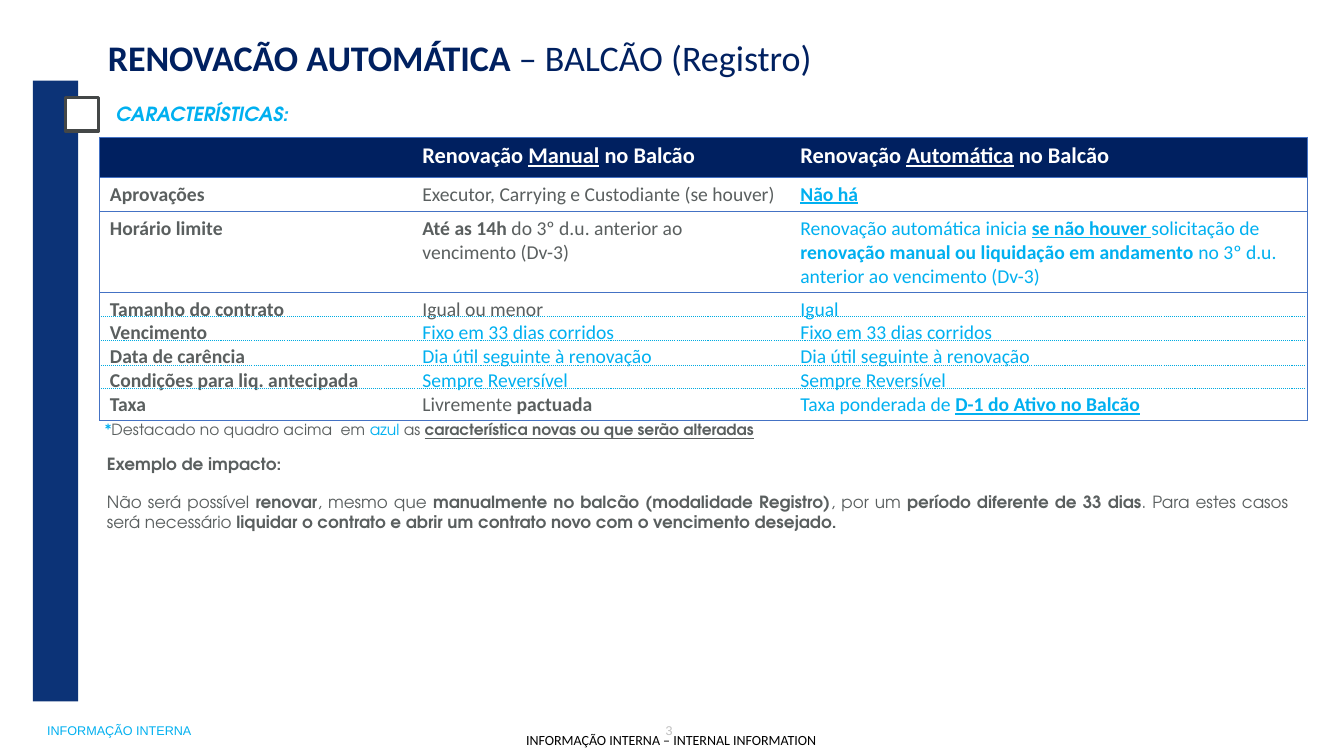
from lxml import etree
from pptx import Presentation
from pptx import util as u
from pptx.dml import color
from pptx.enum import dml, shapes, text
from pptx.oxml import ns

NAVY, AZURE, GREY, WHITE = "002060", "00B0F0", "5A5F5F", "FFFFFF"
BORDER = "4472C4"
GOTHIC = "TeX Gyre Adventor"


def rgb(hex_code):
    return color.RGBColor.from_string(hex_code)


class SlideBuilder:
    def __init__(self, slide):
        self.slide = slide

    def add_pieces(self, paragraph, pieces, size, font, base, align=None):
        """Pieces are (words, marks): b bold, i italic, u underline, a azure."""
        paragraph.alignment = align
        for words, marks in pieces:
            run = paragraph.add_run()
            run.text = words
            run.font.size = u.Pt(size)
            run.font.name = font
            run.font.bold = "b" in marks
            run.font.italic = "i" in marks
            run.font.underline = "u" in marks
            run.font.color.rgb = rgb(AZURE if "a" in marks else base)

    def fill_frame(self, frame, paragraphs, size, font, base, align=None, gap=0):
        for index, pieces in enumerate(paragraphs):
            paragraph = frame.paragraphs[0] if index == 0 else frame.add_paragraph()
            if index:
                paragraph.space_before = u.Pt(gap)
            self.add_pieces(paragraph, pieces, size, font, base, align)

    def title(self, box, pieces, size):
        heading = self.slide.shapes.title
        heading.left, heading.top, heading.width, heading.height = map(u.Pt, box)
        frame = heading.text_frame
        frame.word_wrap = True
        frame.auto_size = text.MSO_AUTO_SIZE.NONE
        frame.vertical_anchor = text.MSO_ANCHOR.MIDDLE
        frame.paragraphs[0].line_spacing = 0.9
        self.fill_frame(frame, [pieces], size, "Calibri", NAVY, text.PP_ALIGN.LEFT)

    def text(self, box, paragraphs, size, font, base, align=None, inset=(7.2, 3.6), gap=0):
        frame = self.slide.shapes.add_textbox(*map(u.Pt, box)).text_frame
        frame.word_wrap = True
        frame.margin_left = frame.margin_right = u.Pt(inset[0])
        frame.margin_top = frame.margin_bottom = u.Pt(inset[1])
        self.fill_frame(frame, paragraphs, size, font, base, align, gap)

    def rectangle(self, box, fill, line=None, width=0):
        block = self.slide.shapes.add_shape(shapes.MSO_SHAPE.RECTANGLE, *map(u.Pt, box))
        block.shadow.inherit = False
        block.fill.solid()
        block.fill.fore_color.rgb = rgb(fill)
        if line:
            block.line.color.rgb = rgb(line)
            block.line.width = u.Pt(width)
        else:
            block.line.fill.background()

    def dotted_rule(self, left, right, y):
        rule = self.slide.shapes.add_connector(
            shapes.MSO_CONNECTOR.STRAIGHT, *map(u.Pt, (left, y, right, y)))
        rule.line.color.rgb = rgb("00ABE1")
        rule.line.width = u.Pt(0.75)
        rule.line.dash_style = dml.MSO_LINE.ROUND_DOT
        etree.SubElement(rule._element.spPr, ns.qn("a:effectLst"))

    def cell_borders(self, cell, visible):
        properties = cell._tc.get_or_add_tcPr()
        for side in "LRTB":
            edge = etree.SubElement(properties, ns.qn(f"a:ln{side}"), w=str(u.Pt(0.5)))
            if side in visible:
                paint = etree.SubElement(edge, ns.qn("a:solidFill"))
                etree.SubElement(paint, ns.qn("a:srgbClr"), val=BORDER)
            else:
                etree.SubElement(edge, ns.qn("a:noFill"))

    def table(self, left, top, widths, heights, rows):
        grid = self.slide.shapes.add_table(
            len(rows), len(widths),
            *map(u.Pt, (left, top, sum(widths), sum(heights)))).table
        grid.first_row = grid.horz_banding = False
        for column, width in zip(grid.columns, widths):
            column.width = u.Pt(width)
        for row, height in zip(grid.rows, heights):
            row.height = u.Pt(height)
        for r, row in enumerate(rows):
            for c, paragraphs in enumerate(row):
                cell = grid.cell(r, c)
                sides = "TB" + ("L" if c == 0 else "") + ("R" if c == len(row) - 1 else "")
                self.cell_borders(cell, sides)
                if r == 0:
                    cell.fill.solid()
                    cell.fill.fore_color.rgb = rgb(NAVY)
                else:
                    cell.fill.background()
                size, base = (16, WHITE) if r == 0 else (14, GREY)
                self.fill_frame(cell.text_frame, paragraphs, size, "Calibri", base)


def lines(marks, *sentences):
    return [[(sentence, marks)] for sentence in sentences]


COMMON_TERMS = lines("a", "Fixo em 33 dias corridos", "Dia útil seguinte à renovação",
                     "Sempre Reversível")

COMPARISON = [
    [
        [],
        [[("Renovação ", "b"), ("Manual", "bu"), (" no Balcão", "b")]],
        [[("Renovação ", "b"), ("Automática", "bu"), (" no Balcão", "b")]],
    ],
    [
        lines("b", "Aprovações"),
        lines("", "Executor, Carrying e Custodiante (se houver)"),
        lines("bua", "Não há"),
    ],
    [
        lines("b", "Horário limite"),
        [[("Até as 14h", "b"), (" do 3º d.u. anterior ao vencimento (Dv-3)", "")]],
        [[("Renovação automática inicia ", "a"), ("se não houver ", "bua"),
          ("solicitação de ", "a"), ("renovação manual ou liquidação em andamento ", "ba"),
          ("no 3º d.u. anterior ao vencimento (Dv-3)", "a")]],
    ],
    [
        lines("b", "Tamanho do contrato", "Vencimento", "Data de carência",
              "Condições para liq. antecipada", "Taxa"),
        lines("", "Igual ou menor") + COMMON_TERMS
        + [[("Livremente ", ""), ("pactuada", "b")]],
        lines("a", "Igual") + COMMON_TERMS
        + [[("Taxa ponderada de ", "a"), ("D-1 do Ativo no Balcão", "bua")]],
    ],
]

IMPACT = [
    [("Exemplo de impacto:", "b")],
    [("Não será possível ", ""), ("renovar", "b"), (", mesmo que ", ""),
     ("manualmente no balcão (modalidade Registro)", "b"), (", por um ", ""),
     ("período diferente de 33 dias", "b"), (". Para estes casos será necessário ", ""),
     ("liquidar o contrato e abrir um contrato novo com o vencimento desejado.", "b")],
]

LEGEND = [("*", "a"), ("Destacado no quadro acima  em ", ""), ("azul ", "a"), ("as ", ""),
          ("característica novas ou que serão alteradas", "bu")]


def main():
    deck = Presentation()
    deck.slide_width, deck.slide_height = u.Pt(960), u.Pt(540)
    page = SlideBuilder(deck.slides.add_slide(deck.slide_layouts[5]))
    justify, center = text.PP_ALIGN.JUSTIFY, text.PP_ALIGN.CENTER

    page.text((26.6, 512.6, 272, 18), lines("", "INFORMAÇÃO INTERNA"), 9, "Arial", AZURE)
    page.text((342, 512.6, 272, 18), lines("", "3"), 9, "Arial", "BFBFBF", center)
    page.text((375.8, 522.7, 212, 12.2), lines("", "INFORMAÇÃO INTERNA – INTERNAL INFORMATION"),
              10, "Calibri", "000000", inset=(0, 0))

    page.title((69.8, 24.5, 623.5, 36.7),
               [("RENOVACÃO AUTOMÁTICA ", "b"), ("– BALCÃO (Registro)", "")], 25.7)
    page.rectangle((23.4, 57.6, 32.4, 443.5), "0C3377")
    page.rectangle((46.8, 69.8, 23.8, 23.8), WHITE, "444747", 2.25)
    page.text((77.8, 70.6, 869, 21.6), lines("bi", "CARACTERÍSTICAS:"), 13.9, GOTHIC, AZURE,
              justify, inset=(5, 2.2))

    page.table(71.3, 98, (223.2, 270, 369.4), (26.6, 24.4, 57, 91.4), COMPARISON)
    for y in (226, 243.4, 261.4, 277.2):
        page.dotted_rule(72, 932.4, y)

    page.text((71.3, 298.8, 800, 16.6), [LEGEND], 11, GOTHIC, GREY, justify, inset=(3.6, 1.4))
    page.text((71.3, 321.8, 854, 62), IMPACT, 12, GOTHIC, GREY, justify,
              inset=(5, 2.2), gap=12.5)

    deck.save("out.pptx")


if __name__ == "__main__":
    main()
